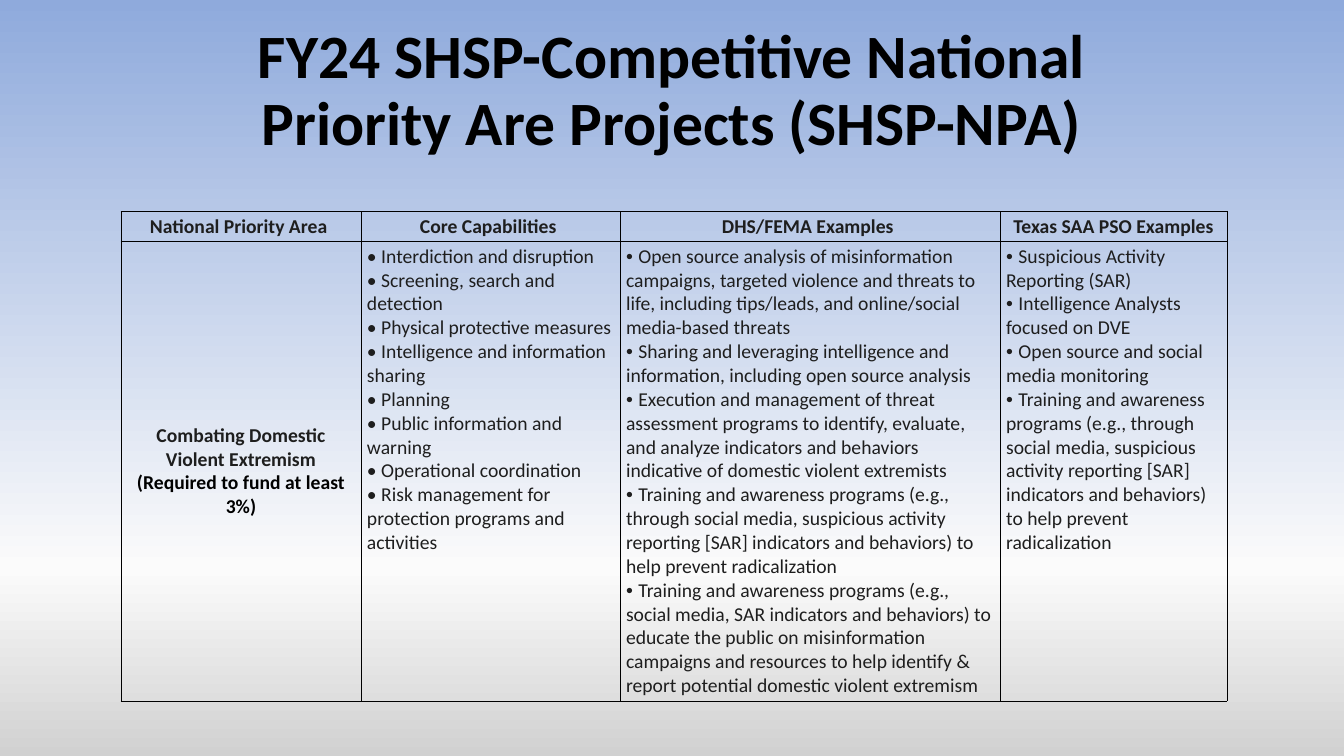
from lxml import etree
from pptx import Presentation
from pptx import util as u
from pptx.dml.color import RGBColor
from pptx.enum import text
from pptx.oxml.ns import qn

COLORS = {"black": "000000", "body": "1E1E1E",
          "sky": "8FAADC", "mist": "FBFBFB", "grey": "D1D1D1"}
BACKDROP = [(0, "sky"), (75, "mist"), (100, "grey")]
FONT = "Calibri"
BODY_PT = 14
COLUMNS = [2.38, 2.57, 3.77, 2.25]
ROWS = [0.27, 4.14]

HEADERS = ["National Priority Area ", "Core Capabilities ",
           "DHS/FEMA Examples ", "Texas SAA PSO Examples"]
PRIORITY = [("Combating Domestic Violent Extremism ", "body"),
            ("(Required to fund at least 3%)", "black")]
CAPABILITIES = [
    "Interdiction and disruption",
    "Screening, search and\ndetection",
    "Physical protective measures",
    "Intelligence and information\nsharing",
    "Planning",
    "Public information and\nwarning",
    "Operational coordination",
    "Risk management for\nprotection programs and\nactivities",
]
FEMA_EXAMPLES = [
    "Open source analysis of misinformation campaigns, targeted violence and threats to\n"
    "life, including tips/leads, and online/social media-based threats",
    "Sharing and leveraging intelligence and information, including open source analysis",
    "Execution and management of threat assessment programs to identify, evaluate, "
    "and analyze indicators and behaviors indicative of domestic violent extremists",
    "Training and awareness programs (e.g., through social media, suspicious activity "
    "reporting [SAR] indicators and behaviors) to help prevent radicalization",
    "Training and awareness programs (e.g., social media, SAR indicators and behaviors) "
    "to educate the public on misinformation campaigns and resources to help identify & "
    "report potential domestic violent extremism",
]
TEXAS_EXAMPLES = [
    "Suspicious Activity\nReporting (SAR)",
    "Intelligence Analysts\nfocused on DVE",
    "Open source and social\nmedia monitoring",
    "Training and awareness\nprograms (e.g., through\nsocial media, suspicious\n"
    "activity reporting [SAR]\nindicators and behaviors)\nto help prevent\nradicalization",
]


def rgb(name):
    return RGBColor.from_string(COLORS[name])


def style(r, size, color="body", bold=False, font=FONT):
    r.font.name, r.font.size, r.font.bold = font, u.Pt(size), bold
    r.font.color.rgb = rgb(color)


def set_backdrop(s):
    fill = s.background.fill
    fill.gradient()
    fill.gradient_angle = 270
    stops = s._element.find(".//" + qn("a:gsLst"))
    for old in list(stops):
        stops.remove(old)
    for share, color in BACKDROP:
        gs = etree.SubElement(stops, qn("a:gs"), pos=str(share * 1000))
        etree.SubElement(gs, qn("a:srgbClr"), val=COLORS[color])


def set_title(s, title):
    sp = s.shapes.title
    sp.left, sp.top, sp.width, sp.height = map(u.Inches, (1.9, 0.19, 9.53, 1.45))
    tf = sp.text_frame
    tf.text = title
    tf.word_wrap, tf.auto_size = True, text.MSO_AUTO_SIZE.NONE
    tf.vertical_anchor = text.MSO_ANCHOR.MIDDLE
    p = tf.paragraphs[0]
    p.alignment, p.line_spacing = text.PP_ALIGN.CENTER, 0.9
    style(p.runs[0], 44, "black", True)


def format_cell(cell):
    """Clear the fill, set narrow margins and draw a thin border all round."""
    cell.margin_left = cell.margin_right = u.Inches(0.06)
    cell.margin_top = cell.margin_bottom = u.Inches(0.03)
    tc_pr = cell._tc.get_or_add_tcPr()
    for side in ("lnL", "lnR", "lnT", "lnB"):
        ln = etree.SubElement(tc_pr, qn("a:" + side), w=str(u.Pt(0.5)))
        line_fill = etree.SubElement(ln, qn("a:solidFill"))
        etree.SubElement(line_fill, qn("a:srgbClr"), val=COLORS["black"])
    cell.fill.background()


def write_label(cell, parts):
    """Centre bold (text, colour) parts in one paragraph."""
    cell.vertical_anchor = text.MSO_ANCHOR.MIDDLE
    p = cell.text_frame.paragraphs[0]
    p.alignment = text.PP_ALIGN.CENTER
    for words, color in parts:
        r = p.add_run()
        r.text = words
        style(r, BODY_PT, color, True)


def write_list(cell, items, bullet_font):
    tf = cell.text_frame
    for i, item in enumerate(items):
        p = tf.add_paragraph() if i else tf.paragraphs[0]
        r = p.add_run()
        r.text = "• "
        style(r, BODY_PT, font=bullet_font)
        for j, line in enumerate(item.split("\n")):
            if j:
                p.add_line_break()
            r = p.add_run()
            r.text = line
            style(r, BODY_PT)
        for br in p._p.findall(qn("a:br")):
            etree.SubElement(br, qn("a:rPr"), sz=str(BODY_PT * 100))


def add_priority_table(s):
    table = s.shapes.add_table(
        len(ROWS), len(COLUMNS), u.Inches(1.2), u.Inches(2.1),
        u.Inches(sum(COLUMNS)), u.Inches(sum(ROWS))).table
    table.first_row = table.horz_banding = False
    for column, width in zip(table.columns, COLUMNS):
        column.width = u.Inches(width)
    for row, height in zip(table.rows, ROWS):
        row.height = u.Inches(height)
    for cell in table.iter_cells():
        format_cell(cell)
    for i, header in enumerate(HEADERS):
        write_label(table.cell(0, i), [(header, "body")])
    write_label(table.cell(1, 0), PRIORITY)
    lists = [(CAPABILITIES, FONT), (FEMA_EXAMPLES, "Arial"), (TEXAS_EXAMPLES, "Arial")]
    for i, (items, bullet_font) in enumerate(lists, 1):
        write_list(table.cell(1, i), items, bullet_font)


def main():
    prs = Presentation()
    prs.slide_width, prs.slide_height = u.Inches(13.33), u.Inches(7.5)
    s = prs.slides.add_slide(prs.slide_layouts[5])
    set_backdrop(s)
    set_title(s, "FY24 SHSP-Competitive National Priority Are Projects (SHSP-NPA)")
    add_priority_table(s)
    prs.save("out.pptx")


if __name__ == "__main__":
    main()
